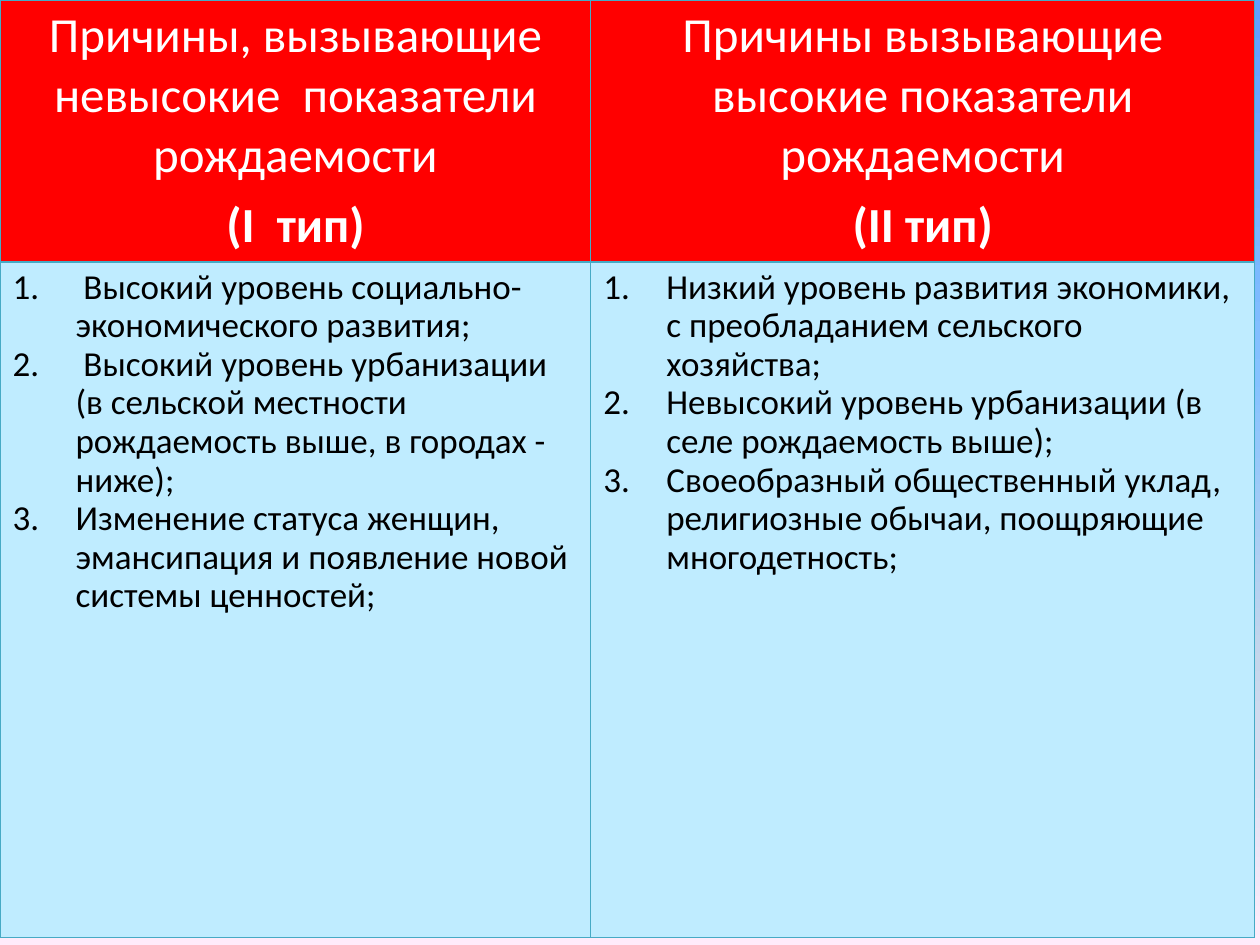
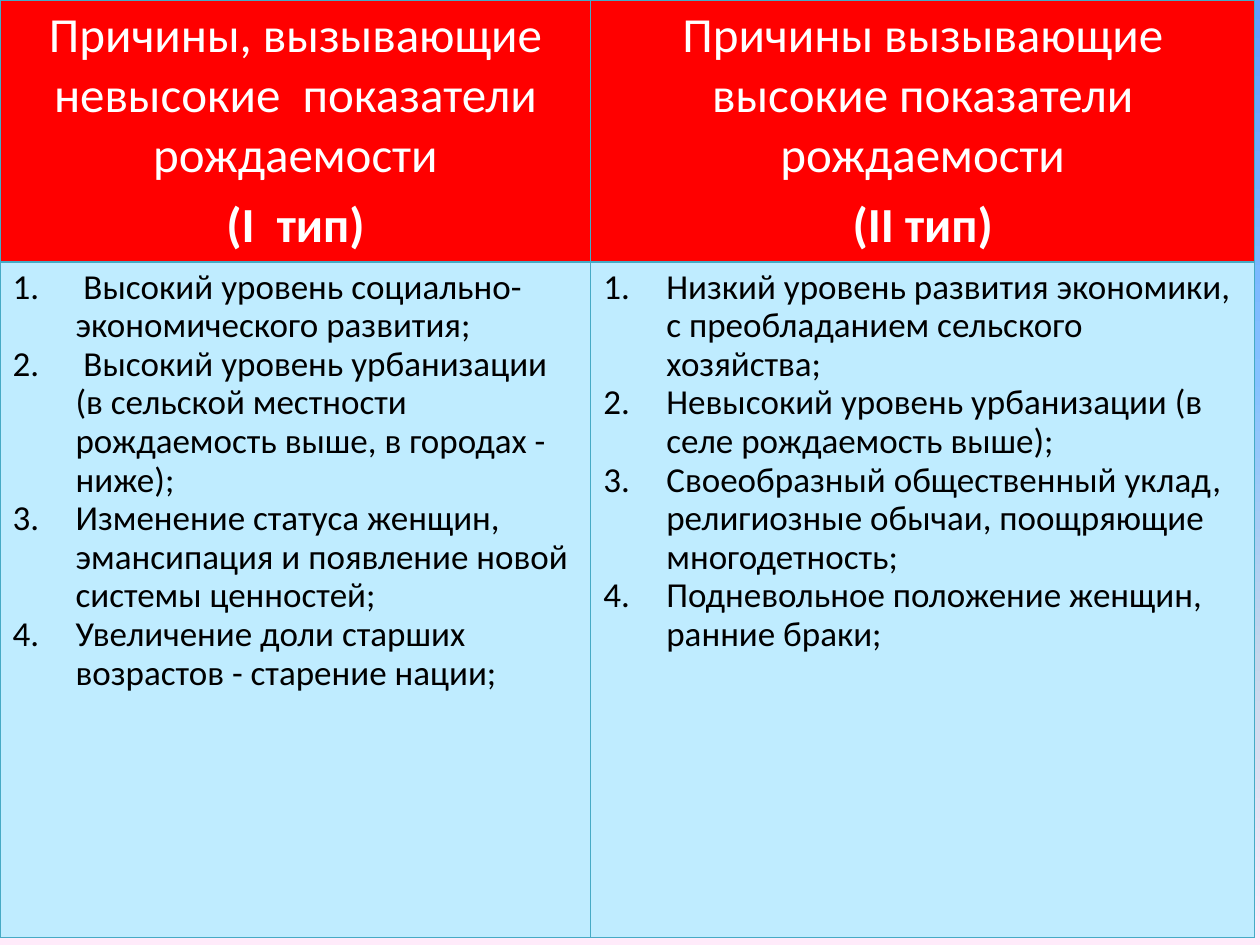
from lxml import etree
from pptx import Presentation
from pptx.dml.color import RGBColor
from pptx.enum import text
from pptx.oxml import ns
from pptx.util import Pt

FONT = "Calibri"
RED, PALE, EDGE = "FF0000", "BFECFF", "46AAC5"
WHITE, BLACK = "FFFFFF", "000000"
SKY = [(0, "5E9EFF"), (40, "85C2FF"), (70, "C4D6EB"), (100, "FFEBFA")]
COLS = [337.6, 379.4]
ROWS = [149.6, 385.9]

HEADS = [
    ("Причины, вызывающие невысокие  показатели рождаемости", "(I  тип)"),
    ("Причины вызывающие высокие показатели рождаемости", "(II тип)"),
]
LOW = [
    " Высокий уровень социально-экономического развития;",
    " Высокий уровень урбанизации (в сельской местности рождаемость выше, "
    "в городах - ниже);",
    "Изменение статуса женщин, эмансипация и появление новой системы ценностей;",
    "Увеличение доли старших возрастов - старение нации;",
]
HIGH = [
    "Низкий уровень развития экономики, с преобладанием сельского хозяйства;",
    "Невысокий уровень урбанизации (в селе рождаемость выше);",
    "Своеобразный общественный уклад, религиозные обычаи, поощряющие многодетность;",
    "Подневольное положение женщин, ранние браки;",
]


def color(code):
    return RGBColor.from_string(code)


def node(parent, tag, **attrs):
    return etree.SubElement(parent, ns.qn(tag), **attrs)


def paint_sky(slide):
    """Fill the background with the vertical four-stop gradient."""
    fill = slide.background.fill
    fill.gradient()
    fill.gradient_angle = 270
    stops = next(slide.element.iter(ns.qn("a:gsLst")))
    for stop in list(stops):
        stops.remove(stop)
    for place, code in SKY:
        stop = node(stops, "a:gs", pos=str(place * 1000))
        node(stop, "a:srgbClr", val=code)


def style_cell(cell, code):
    """Give the cell its fill and four thin borders."""
    cell.fill.solid()
    cell.fill.fore_color.rgb = color(code)
    props = cell._tc.get_or_add_tcPr()
    for spot, side in enumerate("LRTB"):
        line = etree.Element(ns.qn("a:ln" + side), w=str(Pt(0.75)))
        node(node(line, "a:solidFill"), "a:srgbClr", val=EDGE)
        props.insert(spot, line)


def add_paras(cell, lines):
    """Put one line in each paragraph and yield paragraph and run."""
    frame = cell.text_frame
    for spot, words in enumerate(lines):
        para = frame.add_paragraph() if spot else frame.paragraphs[0]
        run = para.add_run()
        run.text = words
        run.font.name = FONT
        yield para, run


def fill_head(cell, lines):
    style_cell(cell, RED)
    for para, run in add_paras(cell, lines):
        para.alignment = text.PP_ALIGN.CENTER
        para.space_before = Pt(5.6)
        run.font.size = Pt(28)
        run.font.bold = run.text == lines[-1]
        run.font.color.rgb = color(WHITE)


def fill_list(cell, items):
    style_cell(cell, PALE)
    for para, run in add_paras(cell, items):
        para.line_spacing = 0.9
        props = para._p.get_or_add_pPr()
        props.set("marL", str(Pt(36)))
        props.set("indent", str(-Pt(36)))
        node(props, "a:buFont", typeface="+mj-lt")
        node(props, "a:buAutoNum", type="arabicPeriod")
        run.font.size = Pt(20)
        run.font.bold = False
        run.font.color.rgb = color(BLACK)


def add_causes(deck, count):
    """Add a slide that shows the first causes of each type."""
    slide = deck.slides.add_slide(deck.slide_layouts[6])
    paint_sky(slide)
    table = slide.shapes.add_table(
        2, 2, Pt(0), Pt(0), Pt(sum(COLS)), Pt(sum(ROWS))).table
    for row, height in zip(table.rows, ROWS):
        row.height = Pt(height)
    for spot, (width, head, items) in enumerate(zip(COLS, HEADS, (LOW, HIGH))):
        table.columns[spot].width = Pt(width)
        fill_head(table.cell(0, spot), head)
        fill_list(table.cell(1, spot), items[:count])


def main():
    deck = Presentation()
    deck.slide_width, deck.slide_height = Pt(720), Pt(540)
    for count in (3, 4):
        add_causes(deck, count)
    deck.save("out.pptx")


if __name__ == "__main__":
    main()
